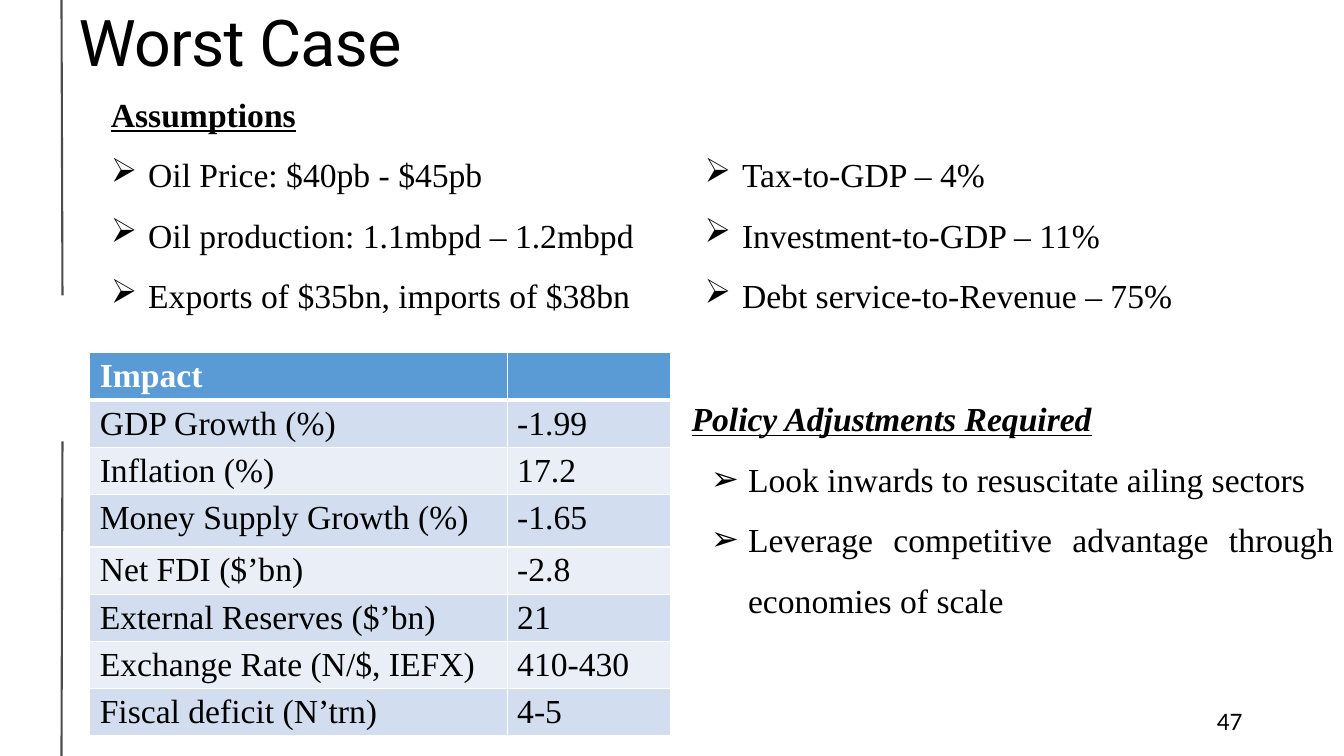
from dataclasses import dataclass

from lxml.etree import SubElement
from pptx import Presentation
from pptx.dml.color import RGBColor
from pptx.enum.shapes import MSO_CONNECTOR
from pptx.enum.text import MSO_ANCHOR, MSO_AUTO_SIZE, PP_ALIGN
from pptx.oxml.ns import qn
from pptx.util import Inches, Pt

TITLE = "Worst Case"
PAGE = "47"
ASSUMPTIONS_HEAD = "Assumptions"
ASSUMPTIONS = [
    "Oil Price: $40pb - $45pb",
    "Oil production: 1.1mbpd – 1.2mbpd",
    "Exports of $35bn, imports of $38bn",
]
RATIOS = [
    "Tax-to-GDP – 4%",
    "Investment-to-GDP – 11%",
    "Debt service-to-Revenue – 75%",
]
POLICY_HEAD = "Policy Adjustments Required"
POLICIES = [
    "Look inwards to resuscitate ailing sectors",
    "Leverage competitive advantage through economies of scale",
]
IMPACT = [
    ("Impact", ""),
    ("GDP Growth (%)", "-1.99"),
    ("Inflation (%)", "17.2"),
    ("Money Supply Growth (%)", "-1.65"),
    ("Net FDI ($’bn)", "-2.8"),
    ("External Reserves ($’bn)", "21"),
    ("Exchange Rate (N/$, IEFX)", "410-430"),
    ("Fiscal deficit (N’trn)", "4-5"),
]
COLUMN_WIDTHS = (4.14, 1.62)
ROW_HEIGHT, TALL_ROW, TALL_HEIGHT = 0.43, 3, 0.52
RULES = [((0.62, 4.38), (0.61, 7.5)), ((0.61, 0), (0.62, 2.93))]
HANG = 0.37
ASSUMPTIONS_TOP, LINE_PITCH = 0.67, 0.6


@dataclass(frozen=True)
class Theme:
    ink: str = "000000"
    white: str = "FFFFFF"
    header: str = "5B9BD5"
    bands: tuple = ("EAEFF7", "D2DEEF")
    title_font: str = "Roboto"
    text_font: str = "Times New Roman"
    page_font: str = "Calibri"
    title_size: int = 46
    text_size: int = 24
    page_size: int = 18


THEME = Theme()


def style(p, font, size, color=THEME.ink, bold=False, italic=False, underline=False):
    for r in p.runs:
        f = r.font
        f.name, f.size = font, Pt(size)
        f.bold, f.italic, f.underline = bold, italic, underline
        f.color.rgb = RGBColor.from_string(color)


def place(sp, left, top, width, height):
    sp.left, sp.top, sp.width, sp.height = map(Inches, (left, top, width, height))


def fill_list(tf, items, margin, head=None, italic=False):
    """Write an optional underlined heading and arrow bullets with a hanging indent."""
    tf.word_wrap = True
    tf.auto_size = MSO_AUTO_SIZE.NONE
    lines = ([head] if head else []) + items
    for i, line in enumerate(lines):
        p = tf.paragraphs[0] if i == 0 else tf.add_paragraph()
        is_head = line == head
        p.text = line
        p.alignment = PP_ALIGN.JUSTIFY
        p.line_spacing = 1.5
        p.space_before = p.space_after = Pt(0)
        pPr = p._p.get_or_add_pPr()
        pPr.set("marL", str(Inches(HANG if is_head else margin)))
        pPr.set("indent", str(-Inches(HANG)))
        if is_head:
            SubElement(pPr, qn("a:buNone"))
        else:
            SubElement(pPr, qn("a:buChar"), char="➢")
        style(p, THEME.text_font, THEME.text_size, bold=is_head,
              italic=is_head and italic, underline=is_head)


def add_rule(slide, start, end):
    line = slide.shapes.add_connector(
        MSO_CONNECTOR.STRAIGHT, *map(Inches, start + end))
    line.line.width = Pt(1.5)
    line.line.color.rgb = RGBColor.from_string(THEME.ink)
    spPr = line._element.spPr
    SubElement(spPr.find(".//" + qn("a:srgbClr")), qn("a:alpha"), val="70000")
    SubElement(spPr, qn("a:effectLst"))


def set_borders(cell, below):
    tcPr = cell._tc.get_or_add_tcPr()
    for side, width in (("L", 1), ("R", 1), ("T", 1), ("B", below)):
        ln = SubElement(tcPr, qn("a:ln" + side), w=str(Pt(width)))
        SubElement(SubElement(ln, qn("a:solidFill")), qn("a:srgbClr"), val=THEME.white)


def add_impact_table(slide):
    table = slide.shapes.add_table(
        len(IMPACT), len(COLUMN_WIDTHS), Inches(0.89), Inches(3.5),
        Inches(sum(COLUMN_WIDTHS)), Inches(ROW_HEIGHT * len(IMPACT))).table
    for column, width in zip(table.columns, COLUMN_WIDTHS):
        column.width = Inches(width)
    for i, row in enumerate(IMPACT):
        table.rows[i].height = Inches(TALL_HEIGHT if i == TALL_ROW else ROW_HEIGHT)
        header = i == 0
        for j, text in enumerate(row):
            cell = table.cell(i, j)
            set_borders(cell, 3 if header else 1)
            cell.fill.solid()
            cell.fill.fore_color.rgb = RGBColor.from_string(
                THEME.header if header else THEME.bands[i % 2])
            if text:
                cell.text = text
            style(cell.text_frame.paragraphs[0], THEME.text_font, THEME.text_size,
                  THEME.white if header else THEME.ink, bold=header)


def main():
    prs = Presentation()
    prs.slide_width, prs.slide_height = Inches(13.33), Inches(7.5)
    slide = prs.slides.add_slide(prs.slide_layouts[1])
    for start, end in RULES:
        add_rule(slide, start, end)

    title, body = slide.shapes.title, slide.placeholders[1]
    place(title, 0.68, 0.09, 12.23, 0.75)
    tf = title.text_frame
    tf.text = TITLE
    tf.auto_size = MSO_AUTO_SIZE.NONE
    tf.vertical_anchor = MSO_ANCHOR.MIDDLE
    p = tf.paragraphs[0]
    p.alignment, p.line_spacing = PP_ALIGN.LEFT, 0.85
    style(p, THEME.title_font, THEME.title_size)
    p.runs[0].font._element.set("spc", "-50")

    place(body, 6.76, 3.7, 6.57, 2.7)
    fill_list(body.text_frame, POLICIES, 0.56, POLICY_HEAD, italic=True)

    columns = [
        (0.97, ASSUMPTIONS_TOP, ASSUMPTIONS, ASSUMPTIONS_HEAD),
        (6.86, ASSUMPTIONS_TOP + LINE_PITCH, RATIOS, None),
    ]
    for left, top, items, head in columns:
        lines = len(items) + bool(head)
        sp = slide.shapes.add_textbox(
            Inches(left), Inches(top), Inches(5.9), Inches(LINE_PITCH * lines + 0.12))
        tf = sp.text_frame
        tf.margin_left = tf.margin_right = Inches(0.13)
        tf.margin_top = tf.margin_bottom = Inches(0.06)
        fill_list(tf, items, HANG, head)

    add_impact_table(slide)

    sp = slide.shapes.add_textbox(Inches(9.42), Inches(6.95), Inches(3), Inches(0.4))
    tf = sp.text_frame
    tf.word_wrap = True
    tf.vertical_anchor = MSO_ANCHOR.MIDDLE
    tf.text = PAGE
    p = tf.paragraphs[0]
    p.alignment = PP_ALIGN.RIGHT
    style(p, THEME.page_font, THEME.page_size)

    prs.save("out.pptx")


if __name__ == "__main__":
    main()
